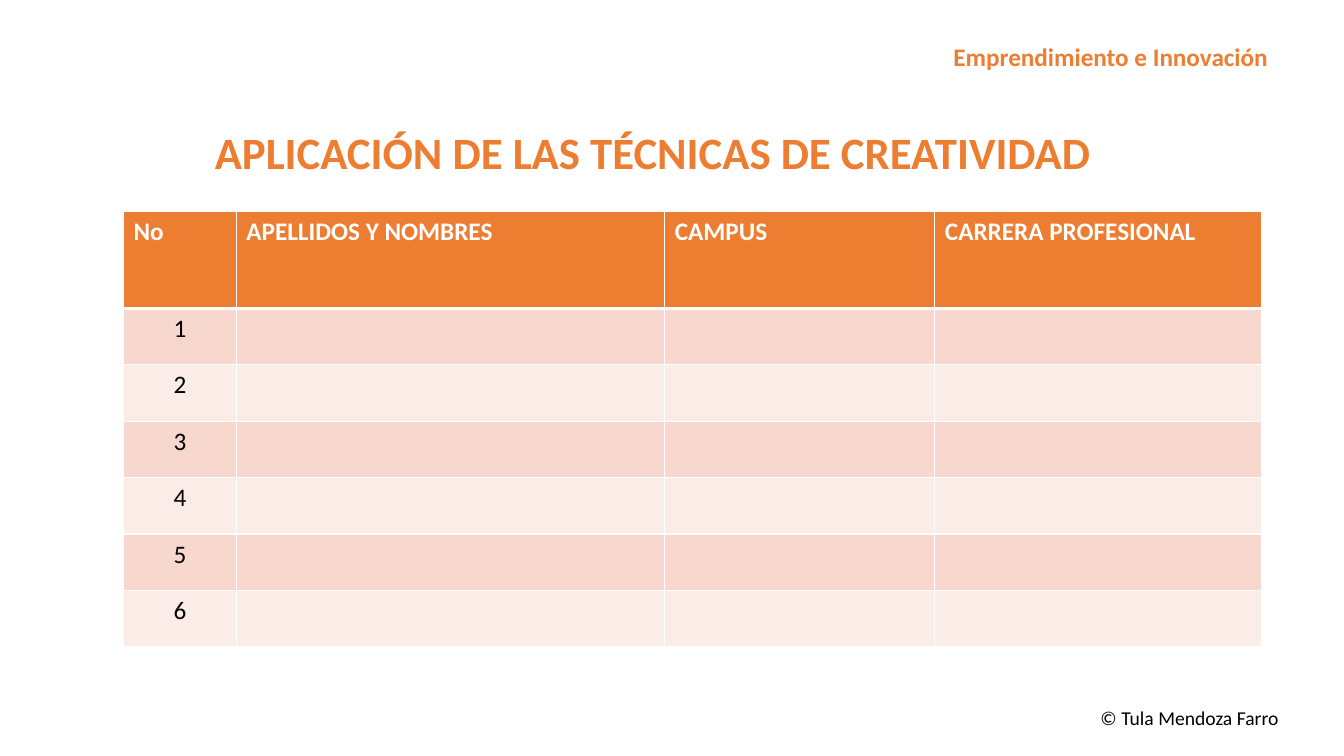
from dataclasses import dataclass

from lxml import etree
from pptx import Presentation
from pptx.dml.color import RGBColor
from pptx.enum import text
from pptx.oxml import ns
from pptx.util import Pt


@dataclass(frozen=True)
class Theme:
    font: str = "Calibri"
    accent: str = "ED7D31"
    dark: str = "F8D7CE"
    light: str = "FCECE8"
    ink: str = "000000"
    white: str = "FFFFFF"
    title: int = 32
    body: int = 18
    note: int = 14


@dataclass(frozen=True)
class Label:
    words: str
    left: float
    top: float
    width: float
    height: float
    size: int
    color: str
    bold: bool
    wrap: bool


@dataclass(frozen=True)
class Column:
    head: str
    width: float


THEME = Theme()
LABELS = [
    Label("Emprendimiento e Innovación", 673.9, 26, 240.5, 29,
          THEME.body, THEME.accent, True, False),
    Label("© Tula Mendoza Farro", 779, 501, 147, 24.5,
          THEME.note, THEME.ink, False, True),
]
COLUMNS = [
    Column("No", 80.6),
    Column("APELLIDOS Y NOMBRES", 306),
    Column("CAMPUS", 193),
    Column("CARRERA PROFESIONAL", 233.2),
]
COUNT = 6
HEAD, ROW = 69.1, 40.3


def write(para, words: str, size: int, color: str, bold: bool) -> None:
    run = para.add_run()
    run.text = words
    font = run.font
    font.name, font.size, font.bold = THEME.font, Pt(size), bold
    font.color.rgb = RGBColor.from_string(color)


def place(shape, left: float, top: float, width: float, height: float) -> None:
    shape.left, shape.top = Pt(left), Pt(top)
    shape.width, shape.height = Pt(width), Pt(height)


def add_title(slide) -> None:
    title = slide.shapes.title
    place(title, 80.6, 78.5, 771.8, 53.3)
    frame = title.text_frame
    frame.auto_size = text.MSO_AUTO_SIZE.NONE
    frame.vertical_anchor = text.MSO_ANCHOR.BOTTOM
    para = frame.paragraphs[0]
    para.alignment = text.PP_ALIGN.CENTER
    para.line_spacing = 0.9
    write(para, "APLICACIÓN DE LAS TÉCNICAS DE CREATIVIDAD",
          THEME.title, THEME.accent, True)


def add_label(slide, label: Label) -> None:
    box = slide.shapes.add_textbox(Pt(label.left), Pt(label.top),
                                   Pt(label.width), Pt(label.height))
    frame = box.text_frame
    frame.word_wrap = label.wrap
    frame.auto_size = text.MSO_AUTO_SIZE.SHAPE_TO_FIT_TEXT
    write(frame.paragraphs[0], label.words, label.size, label.color, label.bold)


def edge(cell, sides: dict[str, int]) -> None:
    """Draw white cell borders, given as side letter and width in points."""
    props = cell._tc.get_or_add_tcPr()
    for side, width in sides.items():
        line = etree.SubElement(props, ns.qn(f"a:ln{side}"), w=str(Pt(width)))
        fill = etree.SubElement(line, ns.qn("a:solidFill"))
        etree.SubElement(fill, ns.qn("a:srgbClr"), val=THEME.white)


def paint(cell, color: str) -> None:
    cell.fill.solid()
    cell.fill.fore_color.rgb = RGBColor.from_string(color)


def add_roster(slide) -> None:
    width = sum(col.width for col in COLUMNS)
    frame = slide.shapes.add_table(COUNT + 1, len(COLUMNS), Pt(88.2), Pt(151.2),
                                   Pt(width), Pt(HEAD + COUNT * ROW))
    table = frame.table
    for x, col in enumerate(COLUMNS):
        table.columns[x].width = Pt(col.width)
        head = table.cell(0, x)
        write(head.text_frame.paragraphs[0], col.head,
              THEME.body, THEME.white, True)
    for y, row in enumerate(table.rows):
        row.height = Pt(ROW if y else HEAD)
        fill = (THEME.dark if y % 2 else THEME.light) if y else THEME.accent
        for cell in row.cells:
            edge(cell, {"L": 1, "R": 1, "T": 3 if y == 1 else 1,
                        "B": 1 if y else 3})
            paint(cell, fill)
        if y:
            para = table.cell(y, 0).text_frame.paragraphs[0]
            para.alignment = text.PP_ALIGN.CENTER
            write(para, str(y), THEME.body, THEME.ink, False)


def main() -> None:
    deck = Presentation()
    deck.slide_width, deck.slide_height = Pt(960), Pt(540)
    slide = deck.slides.add_slide(deck.slide_layouts.get_by_name("Title Only"))
    add_title(slide)
    add_roster(slide)
    for label in LABELS:
        add_label(slide, label)
    deck.save("out.pptx")


if __name__ == "__main__":
    main()
